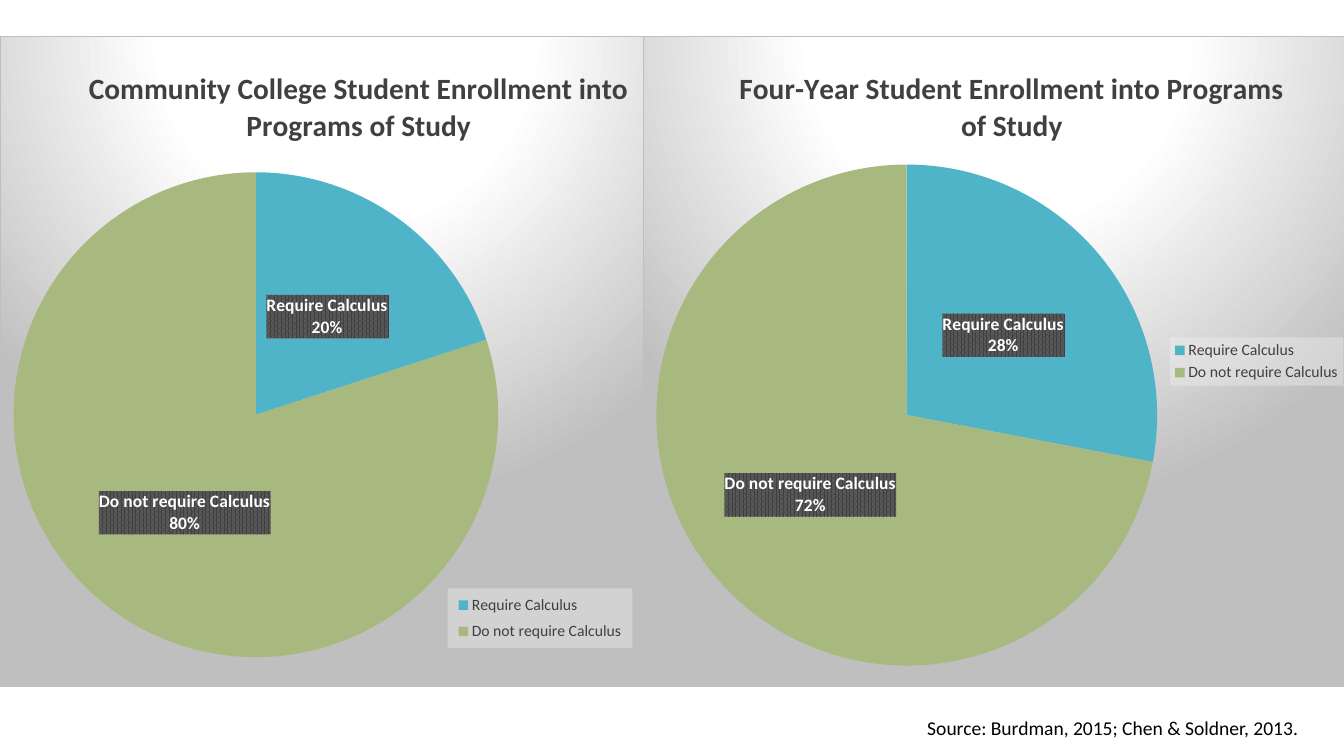
import pptx
import pptx.util
import pptx.chart.data
import pptx.dml.color
import pptx.enum.chart
import pptx.enum.text
import pptx.oxml
import pptx.oxml.ns

Inches = pptx.util.Inches
Pt = pptx.util.Pt
qn = pptx.oxml.ns.qn
NS = pptx.oxml.ns.nsdecls("c", "a")


def color(value):
    return pptx.dml.color.RGBColor.from_string(value)


def place(part, box, inner=False):
    for old in part.findall(qn("c:layout")):
        part.remove(old)
    target = '<c:layoutTarget val="inner"/>' if inner else ""
    modes = '<c:xMode val="edge"/><c:yMode val="edge"/>'
    sizes = "".join(f'<c:{tag} val="{value}"/>' for tag, value in zip("xywh", box))
    layout = pptx.oxml.parse_xml(
        f"<c:layout {NS}><c:manualLayout>{target}{modes}{sizes}</c:manualLayout></c:layout>")
    if inner:
        part.insert(0, layout)
    else:
        part.find(qn("c:overlay")).addprevious(layout)


BACKDROP = f"""<c:spPr {NS}><a:gradFill><a:gsLst>
<a:gs pos="0"><a:srgbClr val="FFFFFF"/></a:gs>
<a:gs pos="39000"><a:srgbClr val="FFFFFF"/></a:gs>
<a:gs pos="100000"><a:srgbClr val="BFBFBF"/></a:gs></a:gsLst>
<a:path path="circle"><a:fillToRect l="50000" t="-80000" r="50000" b="180000"/></a:path>
</a:gradFill><a:ln w="9525"><a:solidFill><a:srgbClr val="BFBFBF"/></a:solidFill></a:ln></c:spPr>"""
LABEL_FILL = f"""<c:spPr {NS}><a:pattFill prst="pct75">
<a:fgClr><a:srgbClr val="404040"/></a:fgClr><a:bgClr><a:srgbClr val="595959"/></a:bgClr>
</a:pattFill><a:ln><a:noFill/></a:ln></c:spPr>"""
LEGEND_FILL = f"""<c:spPr {NS}><a:solidFill><a:srgbClr val="F2F2F2">
<a:alpha val="39000"/></a:srgbClr></a:solidFill><a:ln><a:noFill/></a:ln></c:spPr>"""

enrollments = [
    ("Community College Student Enrollment into Programs of Study", 0, 7.33, (20, 80),
     (0.12, 0.04), (0.019, 0.209, 0.701, 0.746), (0.647, 0.849, 0.267, 0.092)),
    ("Four-Year Student Enrollment into Programs of Study", 6.81, 7.5, (28, 72),
     (0.128, 0.04), (0.018, 0.197, 0.708, 0.771), (0.744, 0.463, 0.245, 0.074)),
]

deck = pptx.Presentation()
deck.slide_width = Inches(14.23)
deck.slide_height = Inches(8)
slide = deck.slides.add_slide(deck.slide_layouts[6])

for heading, left, width, shares, title_box, pie_box, legend_box in enrollments:
    data = pptx.chart.data.CategoryChartData()
    data.categories = ["Require Calculus", "Do not require Calculus"]
    data.add_series("Series 1", shares)
    chart = slide.shapes.add_chart(
        pptx.enum.chart.XL_CHART_TYPE.PIE,
        Inches(left), Inches(0.38), Inches(width), Inches(6.89), data).chart
    chart.font.name = "Calibri"
    chart.font.size = Pt(10)
    chart.font.color.rgb = color("000000")
    chart._chartSpace.chart.addnext(pptx.oxml.parse_xml(BACKDROP))

    chart.has_title = True
    title = chart.chart_title
    title.text_frame.text = heading
    title_font = title.text_frame.paragraphs[0].runs[0].font
    title_font.name = "Calibri"
    title_font.size = Pt(22.4)
    title_font.bold = True
    title_font.color.rgb = color("404040")
    title.include_in_layout = False
    place(title._element, title_box)

    chart.has_legend = True
    legend = chart.legend
    legend.position = pptx.enum.chart.XL_LEGEND_POSITION.RIGHT
    legend.include_in_layout = False
    legend.font.name = "Calibri"
    legend.font.size = Pt(12)
    legend.font.color.rgb = color("404040")
    place(legend._element, legend_box)
    legend._element.find(qn("c:txPr")).addprevious(pptx.oxml.parse_xml(LEGEND_FILL))

    pie = chart.plots[0]
    pie.vary_by_categories = True
    place(chart._chartSpace.chart.plotArea, pie_box, inner=True)
    for index, slice_color in enumerate(("50B4C8", "A8B97F")):
        pie_slice = pie.series[0].points[index].format
        pie_slice.fill.solid()
        pie_slice.fill.fore_color.rgb = color(slice_color)
        pie_slice.line.fill.background()

    labels = pie.series[0].data_labels
    labels.show_value = False
    labels.show_percentage = True
    labels.show_category_name = True
    labels.number_format = "0%"
    labels.number_format_is_linked = False
    labels.position = pptx.enum.chart.XL_LABEL_POSITION.CENTER
    labels.font.name = "Calibri"
    labels.font.size = Pt(13.3)
    labels.font.bold = True
    labels.font.color.rgb = color("FFFFFF")
    labels._element.find(qn("c:txPr")).addprevious(pptx.oxml.parse_xml(LABEL_FILL))
    separator = pptx.oxml.parse_xml(f"<c:separator {NS}>\n</c:separator>")
    labels._element.find(qn("c:showBubbleSize")).addnext(separator)

source = slide.shapes.add_textbox(Inches(7), Inches(7.53), Inches(6.84), Inches(0.35)).text_frame
source.word_wrap = True
source.text = "Source: Burdman, 2015; Chen & Soldner, 2013."
citation = source.paragraphs[0]
citation.alignment = pptx.enum.text.PP_ALIGN.RIGHT
citation_font = citation.runs[0].font
citation_font.name = "Calibri"
citation_font.size = Pt(14.9)
citation_font.color.rgb = color("000000")

deck.save("out.pptx")
